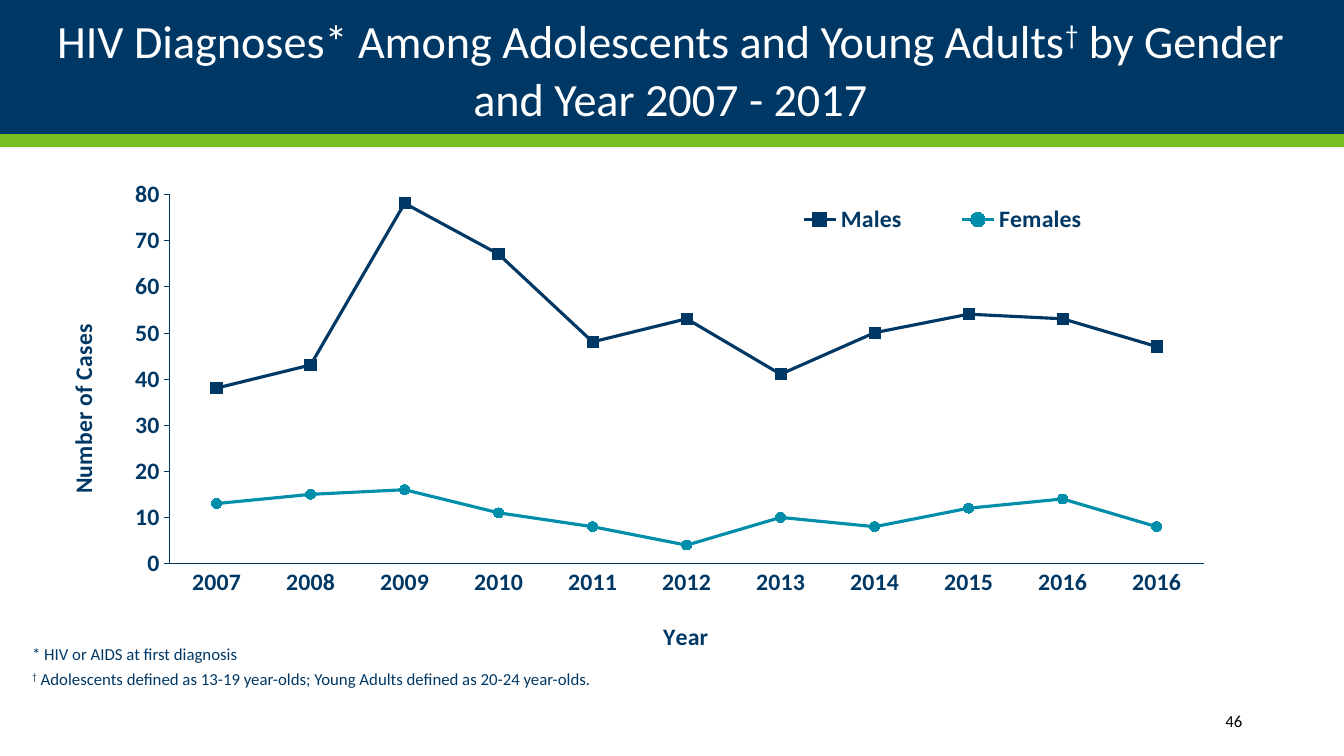
from lxml import etree
from pptx import Presentation
from pptx.chart.data import CategoryChartData
from pptx.dml.color import RGBColor
from pptx.enum.chart import XL_CHART_TYPE, XL_LEGEND_POSITION, XL_MARKER_STYLE, XL_TICK_MARK
from pptx.enum.shapes import MSO_SHAPE
from pptx.enum.text import MSO_ANCHOR, MSO_AUTO_SIZE, PP_ALIGN
from pptx.oxml.ns import qn
from pptx.util import Inches, Pt

LINE_MARKERS = XL_CHART_TYPE.LINE_MARKERS
LEGEND_RIGHT = XL_LEGEND_POSITION.RIGHT
SQUARE, CIRCLE = XL_MARKER_STYLE.SQUARE, XL_MARKER_STYLE.CIRCLE
TICK_NONE, TICK_OUT = XL_TICK_MARK.NONE, XL_TICK_MARK.OUTSIDE
LEFT, CENTER, RIGHT = PP_ALIGN.LEFT, PP_ALIGN.CENTER, PP_ALIGN.RIGHT

FONT = "Calibri"
COLORS = {"navy": "003865", "green": "78BE21", "teal": "008EAA",
          "white": "FFFFFF", "black": "000000"}

YEARS = ["2007", "2008", "2009", "2010", "2011", "2012",
         "2013", "2014", "2015", "2016", "2016"]
SERIES = [
    ("Males", [38, 43, 78, 67, 48, 53, 41, 50, 54, 53, 47], "navy", SQUARE, 8),
    ("Females", [13, 15, 16, 11, 8, 4, 10, 8, 12, 14, 8], "teal", CIRCLE, 7),
]


def rgb(name):
    return RGBColor.from_string(COLORS[name])


def format_font(font, size, color, bold=False):
    font.name = FONT
    font.size = Pt(size)
    font.bold = bold
    font.color.rgb = rgb(color)


def write_text(p, text, size=12, color="navy", bold=False, align=LEFT,
               line_spacing=1.0, before=0):
    """Fill a paragraph, raising every dagger to superscript."""
    p.alignment = align
    p.line_spacing = line_spacing
    p.space_before = Pt(before)
    head, dagger, tail = text.partition("†")
    for part in filter(None, (head, dagger, tail)):
        r = p.add_run()
        r.text = part
        format_font(r.font, size, color, bold)
        if part == "†":
            r.font._element.set("baseline", "30000")


def place(sp, left, top, width, height):
    sp.left, sp.top = Inches(left), Inches(top)
    sp.width, sp.height = Inches(width), Inches(height)


def add_band(s, top, height, color):
    sp = s.shapes.add_shape(MSO_SHAPE.RECTANGLE, 0, Inches(top),
                            Inches(13.33), Inches(height))
    sp.shadow.inherit = False
    sp.fill.solid()
    sp.fill.fore_color.rgb = rgb(color)
    sp.line.fill.background()
    s.shapes.title.element.addprevious(sp.element)  # keep behind the title


def add_text(s, box, lines, **fmt):
    sp = s.shapes.add_textbox(*map(Inches, box))
    tf = sp.text_frame
    tf.word_wrap = True
    tf.vertical_anchor = MSO_ANCHOR.MIDDLE
    for i, line in enumerate(lines):
        p = tf.add_paragraph() if i else tf.paragraphs[0]
        write_text(p, line, **fmt)


def set_layout(element, index, inner=False, **fractions):
    """Place a chart part by fractions of the chart's size."""
    for old in element.findall(qn("c:layout")):
        element.remove(old)
    layout = etree.Element(qn("c:layout"))
    manual = etree.SubElement(layout, qn("c:manualLayout"))
    if inner:
        etree.SubElement(manual, qn("c:layoutTarget")).set("val", "inner")
    for key in "xy":
        etree.SubElement(manual, qn(f"c:{key}Mode")).set("val", "edge")
    for key, value in fractions.items():
        etree.SubElement(manual, qn(f"c:{key}")).set("val", str(value))
    element.insert(index, layout)


def format_axis(axis, title, tick, x, y):
    axis.has_major_gridlines = False
    axis.major_tick_mark = tick
    axis.minor_tick_mark = TICK_NONE
    axis.format.line.color.rgb = rgb("navy")
    axis.format.line.width = Pt(0.25)
    format_font(axis.tick_labels.font, 17, "navy", True)
    write_text(axis.axis_title.text_frame.paragraphs[0], title,
               size=17, bold=True, align=CENTER)
    set_layout(axis.axis_title._element, 1, x=x, y=y)


def add_line_chart(s):
    data = CategoryChartData()
    data.categories = YEARS
    for name, values, *_ in SERIES:
        data.add_series(name, values)
    chart = s.shapes.add_chart(LINE_MARKERS, Inches(0.44), Inches(1.78),
                               Inches(11.5), Inches(4.76), data).chart
    chart.has_title = False
    format_font(chart.font, 17, "navy", True)
    set_layout(chart.plots[0]._element.getparent(), 0, inner=True,
               x=0.108, y=0.031, w=0.892, h=0.779)

    # Axes
    format_axis(chart.category_axis, "Year", TICK_NONE, 0.53, 0.92)
    format_axis(chart.value_axis, "Number of Cases", TICK_OUT, 0.015, 0.3)
    chart.value_axis.minimum_scale = 0
    chart.value_axis.maximum_scale = 80
    chart.value_axis.major_unit = 10

    # Legend
    chart.has_legend = True
    chart.legend.position = LEGEND_RIGHT
    chart.legend.include_in_layout = False
    format_font(chart.legend.font, 17, "navy", True)
    set_layout(chart.legend._element, 1, x=0.61, y=0.04, w=0.33, h=0.09)

    # Series
    chart.plots[0].vary_by_categories = False
    for series, (_, _, color, style, size) in zip(chart.plots[0].series, SERIES):
        series.smooth = False
        series.format.line.color.rgb = rgb(color)
        series.format.line.width = Pt(2.25)
        marker = series.marker
        marker.style, marker.size = style, size
        marker.format.fill.solid()
        marker.format.fill.fore_color.rgb = rgb(color)
        marker.format.line.color.rgb = rgb(color)


def main():
    prs = Presentation()
    prs.slide_width, prs.slide_height = Inches(13.33), Inches(7.5)
    s = prs.slides.add_slide(prs.slide_layouts[5])

    # Header
    add_band(s, 0, 1.33, "navy")
    add_band(s, 1.33, 0.13, "green")
    title = s.shapes.title
    place(title, 0.44, 0.17, 12.42, 1)
    tf = title.text_frame
    tf.auto_size = MSO_AUTO_SIZE.NONE
    tf.vertical_anchor = MSO_ANCHOR.MIDDLE
    write_text(tf.paragraphs[0],
               "HIV Diagnoses* Among Adolescents and Young Adults† by Gender and Year 2007 - 2017",
               size=33, color="white", align=CENTER, line_spacing=1.05)

    # Chart
    add_line_chart(s)

    # Footnotes and slide number
    add_text(s, (0.22, 6.34, 12.83, 0.58),
             ["* HIV or AIDS at first diagnosis",
              "† Adolescents defined as 13-19 year-olds; Young Adults defined as 20-24 year-olds."],
             line_spacing=0.8, before=6)
    add_text(s, (10.82, 6.95, 1.6, 0.4), ["46"], color="black", align=RIGHT)

    prs.save("out.pptx")


if __name__ == "__main__":
    main()
